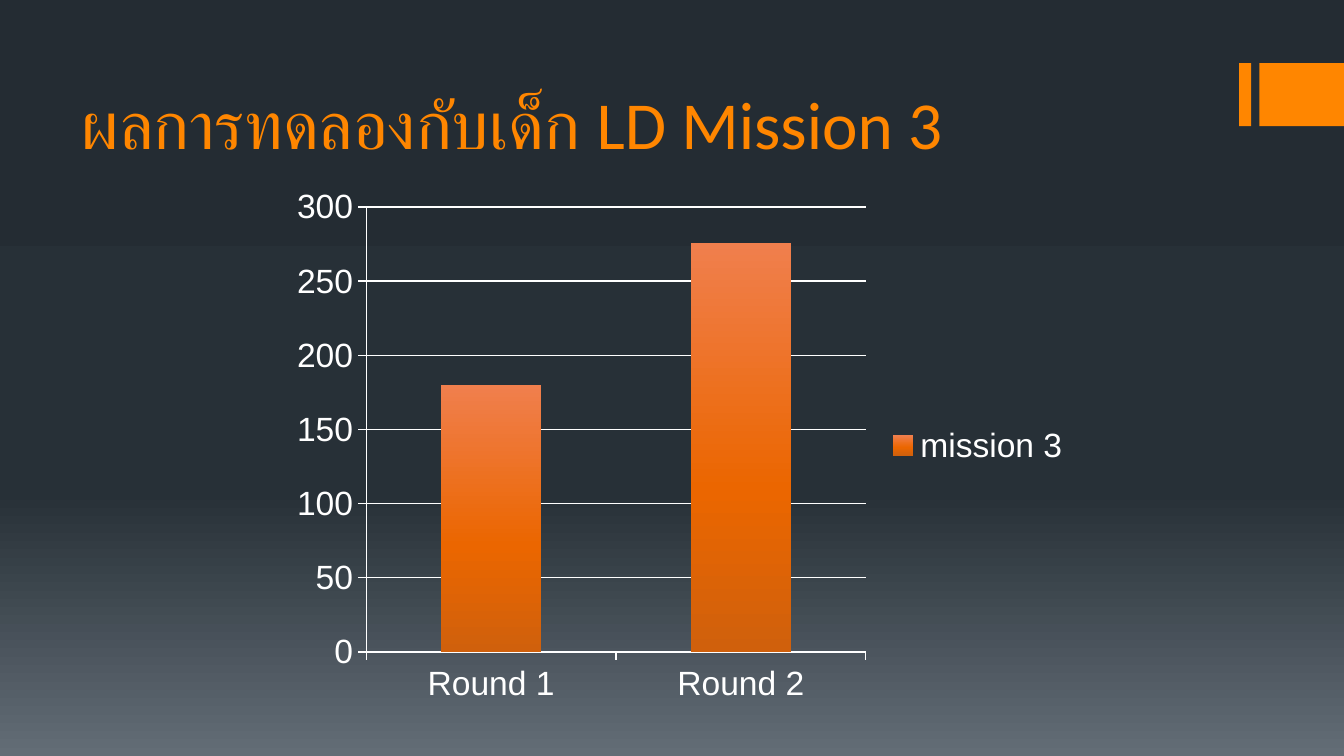
from lxml.etree import SubElement
from pptx import Presentation
from pptx.chart.data import CategoryChartData
from pptx.dml.color import RGBColor
from pptx.enum.chart import XL_CHART_TYPE, XL_LEGEND_POSITION, XL_TICK_MARK
from pptx.enum.shapes import MSO_SHAPE
from pptx.enum.text import MSO_ANCHOR, MSO_AUTO_SIZE, PP_ALIGN
from pptx.oxml.ns import qn
from pptx.util import Inches, Pt

ORANGE = "FF8600"
WHITE = "FFFFFF"
BACKGROUND_STOPS = [(0, "242C33"), (65, "273037"), (100, "636D76")]
BAR_STOPS = [(0, "F07F4D"), (60, "EB6600"), (100, "D0600C")]


def color(hex_value):
    """Turn a hex string into a colour."""
    return RGBColor.from_string(hex_value)


def apply_format(target, values):
    """Set every attribute named in a dict."""
    for name, value in values.items():
        setattr(target, name, value)


def format_font(font, name, size, hex_value):
    """Set the face, size and colour of a font."""
    apply_format(font, {"name": name, "size": Pt(size), "bold": False})
    font.color.rgb = color(hex_value)


def set_gradient(fill, element, stops):
    """Fill from top to bottom through the given stops."""
    fill.gradient()
    fill.gradient_angle = 270
    stop_list = next(element.iter(qn("a:gsLst")))
    for old_stop in list(stop_list):
        stop_list.remove(old_stop)
    for percent, hex_value in stops:
        stop = SubElement(stop_list, qn("a:gs"), pos=str(percent * 1000))
        SubElement(stop, qn("a:srgbClr"), val=hex_value)


def add_block(slide, left, width):
    """Add one orange block of the corner ornament."""
    block = slide.shapes.add_shape(
        MSO_SHAPE.RECTANGLE, Inches(left), Inches(0.47), Inches(width), Inches(0.47)
    )
    block.shadow.inherit = False
    block.fill.solid()
    block.fill.fore_color.rgb = color(ORANGE)
    block.line.fill.background()


def set_title(slide, text):
    """Place and format the title placeholder."""
    title = slide.shapes.title
    apply_format(title, {
        "left": Inches(0.51), "top": Inches(0.37),
        "width": Inches(9), "height": Inches(0.94),
    })
    margins = ("margin_left", "margin_top", "margin_right", "margin_bottom")
    apply_format(title.text_frame, {
        "text": text, "word_wrap": True, "auto_size": MSO_AUTO_SIZE.NONE,
        "vertical_anchor": MSO_ANCHOR.BOTTOM, **dict.fromkeys(margins, Inches(0.1)),
    })
    paragraph = title.text_frame.paragraphs[0]
    paragraph.alignment = PP_ALIGN.LEFT
    format_font(paragraph.runs[0].font, "Calibri", 36, ORANGE)


def format_line(line):
    """Draw a chart line in white."""
    line.color.rgb = color(WHITE)
    line.width = Pt(0.75)


def add_result_chart(slide):
    """Add the column chart of both rounds."""
    data = CategoryChartData()
    data.categories = ["Round 1", "Round 2"]
    data.add_series("mission 3", [180, 276])
    chart = slide.shapes.add_chart(
        XL_CHART_TYPE.COLUMN_CLUSTERED,
        Inches(2.09), Inches(1.32), Inches(5.98), Inches(3.99), data,
    ).chart
    apply_format(chart, {"has_title": False, "has_legend": True})
    format_font(chart.font, "Arial", 18, WHITE)
    apply_format(chart.legend, {
        "position": XL_LEGEND_POSITION.RIGHT, "include_in_layout": False,
    })
    for axis in (chart.category_axis, chart.value_axis):
        axis.major_tick_mark = XL_TICK_MARK.OUTSIDE
        format_line(axis.format.line)
    apply_format(chart.value_axis, {
        "minimum_scale": 0, "maximum_scale": 300, "major_unit": 50,
        "has_major_gridlines": True,
    })
    format_line(chart.value_axis.major_gridlines.format.line)
    plot = chart.plots[0]
    apply_format(plot, {"gap_width": 150, "vary_by_categories": False})
    series = plot.series[0]
    set_gradient(series.format.fill, series._element, BAR_STOPS)


def main():
    """Build and save the slide."""
    presentation = Presentation()
    presentation.slide_width = Inches(10)
    presentation.slide_height = Inches(10 * 9 / 16)
    slide = presentation.slides.add_slide(presentation.slide_layouts[5])
    set_gradient(slide.background.fill, slide.element, BACKGROUND_STOPS)
    for left, width in ((9.22, 0.09), (9.37, 0.63)):
        add_block(slide, left, width)
    set_title(slide, "ผลการทดลองกับเด็ก LD Mission 3")
    add_result_chart(slide)
    presentation.save("out.pptx")


if __name__ == "__main__":
    main()
